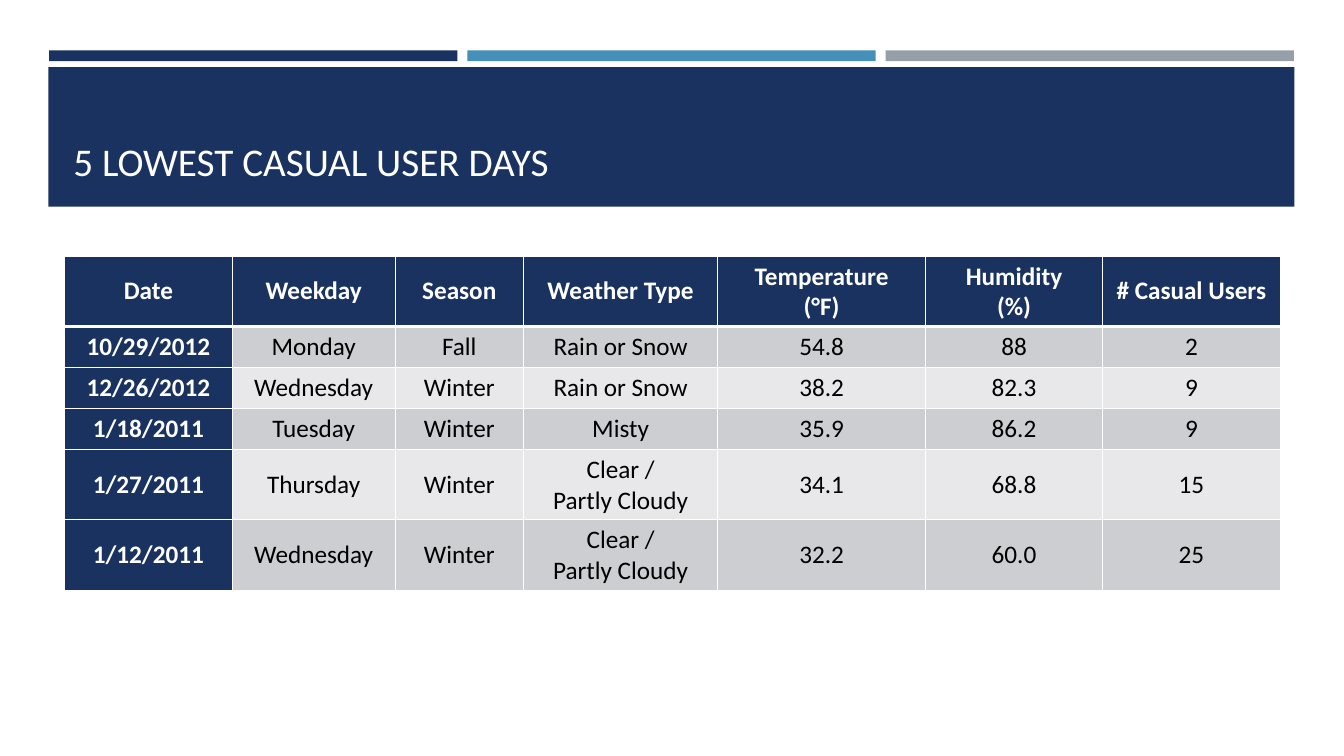
"""Build the slide listing the five days with the fewest casual users."""
import pptx
import pptx.util
import pptx.dml.color
import pptx.enum.shapes
import pptx.enum.text
import pptx.oxml
import pptx.oxml.ns

Cm, Pt = pptx.util.Cm, pptx.util.Pt
NAVY, BLUE, GREY, WHITE, BLACK = "1A3260", "4590B8", "969FA7", "FFFFFF", "000000"
BANDS = ["CDCED2", "E8E8EA"]


def paint(fill, hex_color):
    fill.solid()
    fill.fore_color.rgb = pptx.dml.color.RGBColor.from_string(hex_color)


def style_text(paragraph, hex_color, font_values):
    paint(paragraph.font.fill, hex_color)
    for name, value in font_values.items():
        setattr(paragraph.font, name, value)


deck = pptx.Presentation()
deck.slide_width, deck.slide_height = Cm(33.87), Cm(19.05)
slide = deck.slides.add_slide(deck.slide_layouts[6])

blocks = [(1.24 + 10.54 * i, 1.27, 10.29, 0.27, color)
          for i, color in enumerate([NAVY, BLUE, GREY])]
blocks.append((1.22, 1.69, 31.4, 3.52, NAVY))
for left, top, width, height, color in blocks:
    block = slide.shapes.add_shape(pptx.enum.shapes.MSO_SHAPE.RECTANGLE,
                                   Cm(left), Cm(top), Cm(width), Cm(height))
    block.shadow.inherit = False
    paint(block.fill, color)
    block.line.fill.background()

title = slide.shapes.add_textbox(Cm(1.6), Cm(2.03), Cm(30.63), Cm(2.74)).text_frame
title.word_wrap = True
title.vertical_anchor = pptx.enum.text.MSO_ANCHOR.BOTTOM
title.text = "5 LOWEST CASUAL USER DAYS"
style_text(title.paragraphs[0], WHITE, {"name": "Calibri", "size": Pt(28)})

days = [
    ["Date", "Weekday", "Season", "Weather Type", "Temperature\n(°F)", "Humidity\n(%)", "# Casual Users"],
    ["10/29/2012", "Monday", "Fall", "Rain or Snow", "54.8", "88", "2"],
    ["12/26/2012", "Wednesday", "Winter", "Rain or Snow", "38.2", "82.3", "9"],
    ["1/18/2011", "Tuesday", "Winter", "Misty", "35.9", "86.2", "9"],
    ["1/27/2011", "Thursday", "Winter", "Clear /\nPartly Cloudy", "34.1", "68.8", "15"],
    ["1/12/2011", "Wednesday", "Winter", "Clear /\nPartly Cloudy", "32.2", "60.0", "25"],
]
column_widths = [4.22, 4.11, 3.23, 4.9, 5.23, 4.47, 4.47]
row_heights = [1.78 if any("\n" in text for text in day) else 1.03 for day in days]

day_table = slide.shapes.add_table(len(days), len(column_widths), Cm(1.63), Cm(6.45),
                                   Cm(sum(column_widths)), Cm(sum(row_heights))).table
for column, width in zip(day_table.columns, column_widths):
    column.width = Cm(width)

for r, day in enumerate(days):
    day_table.rows[r].height = Cm(row_heights[r])
    for c, text in enumerate(day):
        cell = day_table.cell(r, c)
        heading = r == 0 or c == 0
        cell.text = text
        cell.vertical_anchor = pptx.enum.text.MSO_ANCHOR.MIDDLE
        for paragraph in cell.text_frame.paragraphs:
            paragraph.alignment = pptx.enum.text.PP_ALIGN.CENTER
            style_text(paragraph, WHITE if heading else BLACK,
                       {"name": "Calibri", "size": Pt(18), "bold": heading})
        for side in "LRTB":
            under_header = (r, side) in [(0, "B"), (1, "T")]
            cell._tc.get_or_add_tcPr().append(pptx.oxml.parse_xml(
                f'<a:ln{side} {pptx.oxml.ns.nsdecls("a")} w="{Pt(3 if under_header else 1)}">'
                f'<a:solidFill><a:srgbClr val="{WHITE}"/></a:solidFill></a:ln{side}>'))
        paint(cell.fill, NAVY if heading else BANDS[(r - 1) % 2])

deck.save("out.pptx")
